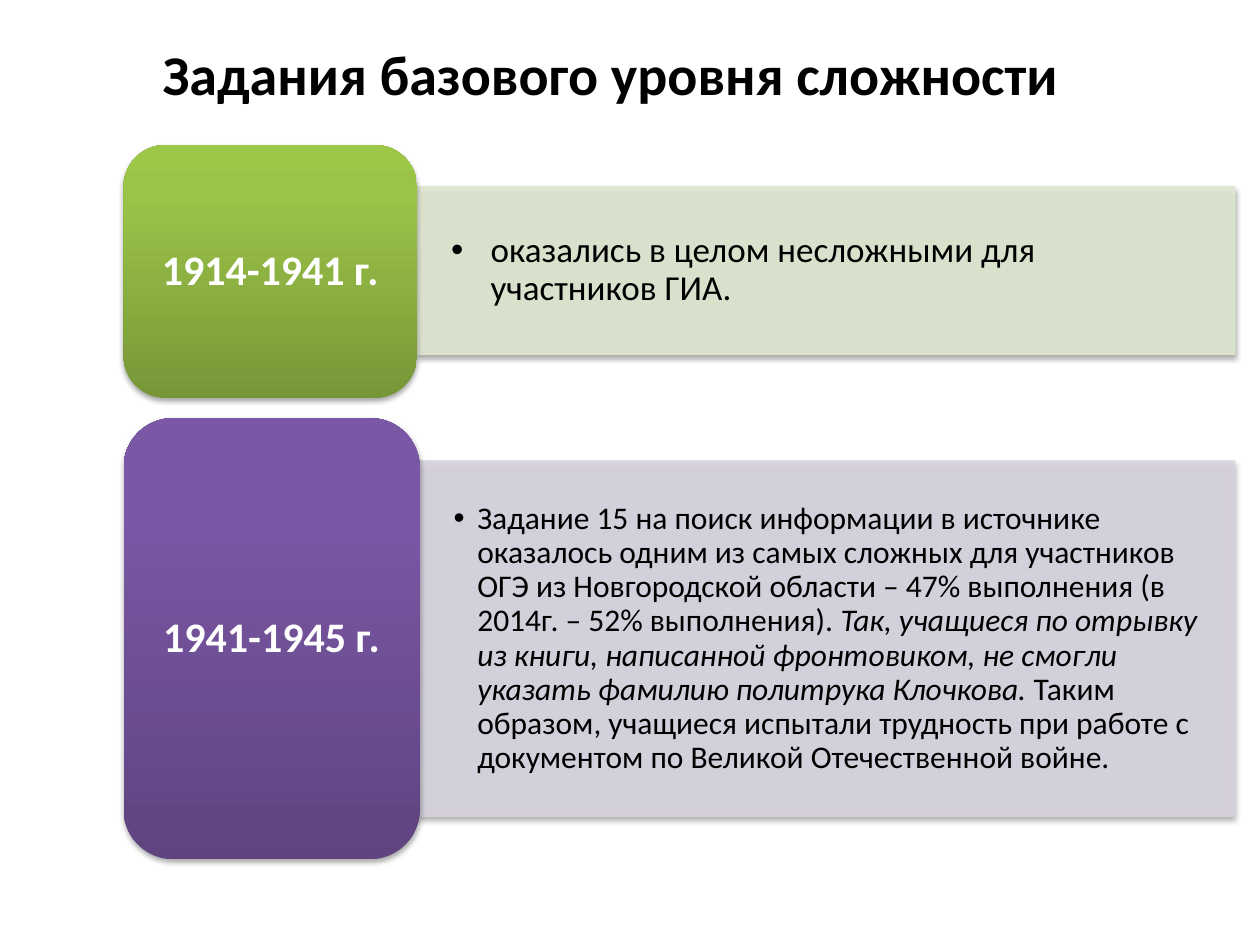
"""Build a slide comparing basic-level tasks for two historical periods."""
import copy

import pptx
import pptx.dml.color
import pptx.enum.shapes
import pptx.enum.text
import pptx.oxml
import pptx.oxml.ns
import pptx.util
from lxml import etree

Pt = pptx.util.Pt
RGBColor = pptx.dml.color.RGBColor
SHAPE = pptx.enum.shapes.MSO_SHAPE
ALIGN = pptx.enum.text.PP_ALIGN
MIDDLE = pptx.enum.text.MSO_ANCHOR.MIDDLE
qn = pptx.oxml.ns.qn

BLACK = RGBColor(0x00, 0x00, 0x00)
WHITE = RGBColor(0xFF, 0xFF, 0xFF)
PALE_GREEN = RGBColor(0xDE, 0xE7, 0xD1)
GREENS = [RGBColor(0x77, 0x97, 0x37), RGBColor(0x9B, 0xC3, 0x48), RGBColor(0x9D, 0xC7, 0x46)]
PALE_VIOLET = RGBColor(0xD8, 0xD3, 0xE0)
VIOLETS = [RGBColor(0x5F, 0x44, 0x80), RGBColor(0x7B, 0x58, 0xA6), RGBColor(0x7C, 0x57, 0xA8)]

SHADOW = (
    '<a:outerShdw xmlns:a="http://schemas.openxmlformats.org/drawingml/2006/main" '
    'blurRad="40000" dist="23000" dir="5400000" rotWithShape="0">'
    '<a:srgbClr val="000000"><a:alpha val="35000"/></a:srgbClr></a:outerShdw>'
)


def add_box(s, kind, box, margins):
    sp = s.shapes.add_shape(kind, *[Pt(v) for v in box])
    sp.shadow.inherit = False
    sp._element.spPr.find(qn("a:effectLst")).append(pptx.oxml.parse_xml(SHADOW))
    tf = sp.text_frame
    tf.word_wrap = True
    tf.vertical_anchor = MIDDLE
    tf.margin_left = tf.margin_right = Pt(margins[0])
    tf.margin_top = tf.margin_bottom = Pt(margins[1])
    tf.paragraphs[0].line_spacing = 0.9
    return sp


def add_run(p, text, size, color, bold=False, italic=False):
    r = p.add_run()
    r.text = text
    style = {"name": "Calibri", "size": Pt(size), "bold": bold, "italic": italic}
    for key, value in style.items():
        setattr(r.font, key, value)
    r.font.color.rgb = color


ROWS = [
    {
        "period": "1914-1941 г.",
        "label_box": (70.6, 82.8, 167.7, 144.7),
        "panel_box": (238.3, 106.6, 467.3, 95.8),
        "panel_color": PALE_GREEN,
        "gradient": GREENS,
        "size": 20,
        "indent": 22.5,
        "runs": [("оказались в целом несложными для участников ГИА.", False)],
    },
    {
        "period": "1941-1945 г.",
        "label_box": (70.6, 239, 169.2, 252),
        "panel_box": (239.8, 263.5, 465.8, 203),
        "panel_color": PALE_VIOLET,
        "gradient": VIOLETS,
        "size": 18,
        "indent": 13.5,
        "runs": [
            ("Задание 15 на поиск информации в источнике оказалось одним из самых "
             "сложных для участников ОГЭ из Новгородской области – 47% выполнения "
             "(в 2014г. – 52% выполнения). ", False),
            ("Так, учащиеся по отрывку из книги, написанной фронтовиком, не смогли "
             "указать фамилию политрука Клочкова.", True),
            (" Таким образом, учащиеся испытали трудность при работе с документом "
             "по Великой Отечественной войне.", False),
        ],
    },
]

prs = pptx.Presentation()
prs.slide_width, prs.slide_height = Pt(720), Pt(540)
s = prs.slides.add_slide(prs.slide_layouts[5])

title = s.shapes.title
place = {"left": Pt(85.7), "top": Pt(9.4), "width": Pt(634.3), "height": Pt(64.8)}
for key, value in place.items():
    setattr(title, key, value)
title.text_frame.vertical_anchor = MIDDLE
p = title.text_frame.paragraphs[0]
p.alignment = ALIGN.LEFT
add_run(p, "Задания базового уровня сложности", 32, BLACK, bold=True)

for row in ROWS:
    sp = add_box(s, SHAPE.RECTANGLE, row["panel_box"], (19.5, 9.75))
    sp.fill.solid()
    sp.fill.fore_color.rgb = row["panel_color"]
    sp.line.color.rgb = row["panel_color"]
    sp.line.width = Pt(0.75)
    for fill in sp._element.spPr.iter(qn("a:solidFill")):
        etree.SubElement(fill[0], qn("a:alpha"), val="90000")
    p = sp.text_frame.paragraphs[0]
    p.alignment = ALIGN.LEFT
    pPr = p._p.get_or_add_pPr()
    pPr.set("marL", str(Pt(row["indent"])))
    pPr.set("indent", str(-Pt(row["indent"])))
    etree.SubElement(pPr, qn("a:buFont"), typeface="Arial")
    etree.SubElement(pPr, qn("a:buChar"), char="•")
    for text, italic in row["runs"]:
        add_run(p, text, row["size"], BLACK, italic=italic)

    sp = add_box(s, SHAPE.ROUNDED_RECTANGLE, row["label_box"], (0, 0))
    sp.line.fill.background()
    sp.fill.gradient()
    sp.fill.gradient_angle = 90
    gsLst = sp._element.spPr.find(".//" + qn("a:gsLst"))
    gsLst.insert(1, copy.deepcopy(gsLst[0]))
    for stop, position, color in zip(sp.fill.gradient_stops, (0, 0.8, 1), row["gradient"]):
        stop.position = position
        stop.color.rgb = color
    p = sp.text_frame.paragraphs[0]
    p.alignment = ALIGN.CENTER
    add_run(p, row["period"], 24, WHITE, bold=True)

prs.save("out.pptx")
